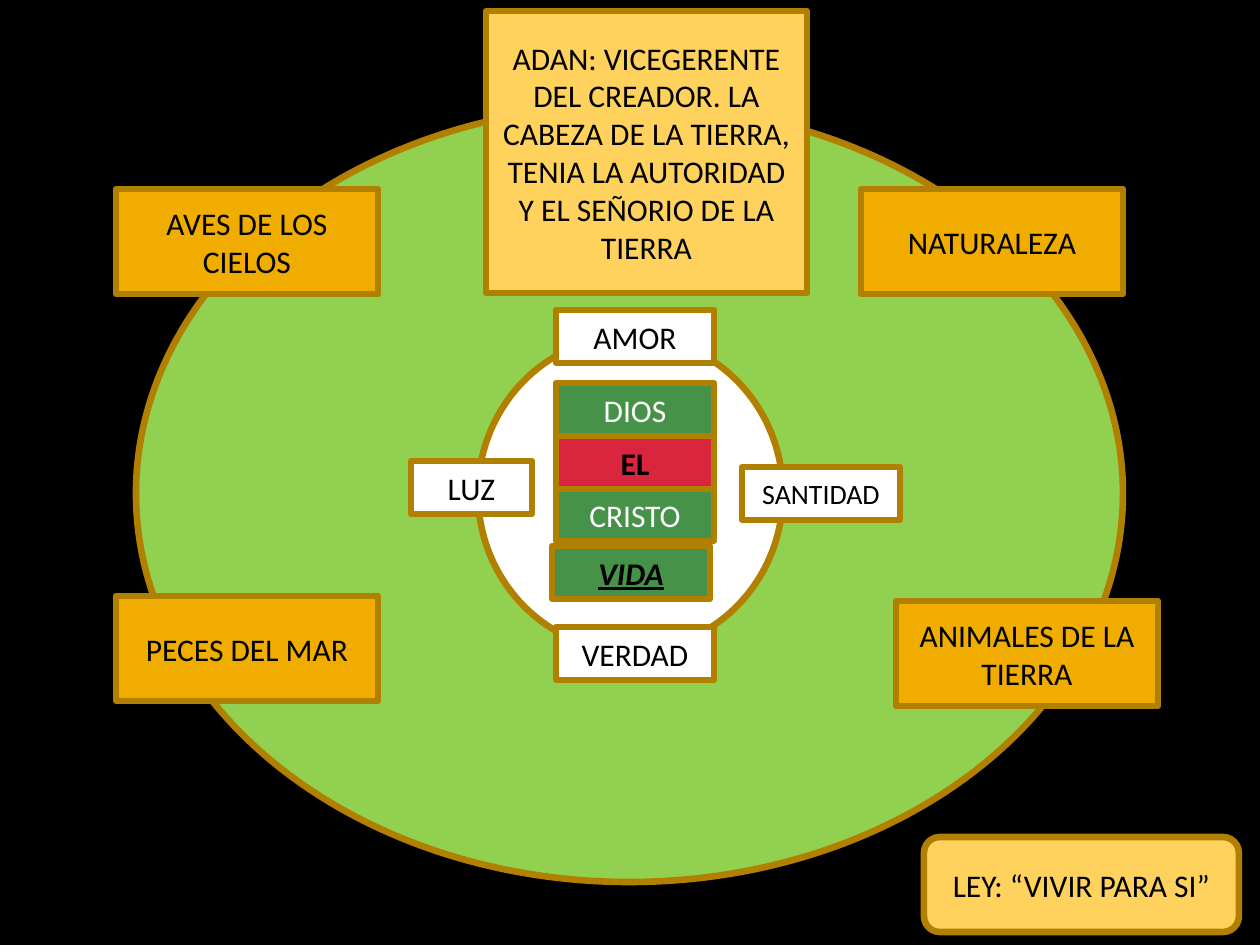
from pptx import Presentation
from pptx.dml.color import RGBColor
from pptx.enum.shapes import MSO_SHAPE
from pptx.enum.text import MSO_ANCHOR, PP_ALIGN
from pptx.util import Pt

PX = 914400 // 126  # EMU in one px

BLACK = RGBColor(0x00, 0x00, 0x00)
WHITE = RGBColor(0xFF, 0xFF, 0xFF)
LIME = RGBColor(0x92, 0xD0, 0x50)
GREEN = RGBColor(0x47, 0x92, 0x49)
RED = RGBColor(0xD9, 0x25, 0x3E)
AMBER = RGBColor(0xF0, 0xAD, 0x00)
SAND = RGBColor(0xFF, 0xD2, 0x5D)
BROWN = RGBColor(0xB2, 0x80, 0x00)

TAG = (158, 53)    # small boxes around the centre
REALM = (262, 105)  # boxes on the rim of the earth
MID = 556          # left edge of the central column


def add_form(slide, kind, spot, size, fill):
    box = (n * PX for n in (*spot, *size))
    form = slide.shapes.add_shape(kind, *box)
    form.shadow.inherit = False
    form.fill.solid()
    form.fill.fore_color.rgb = fill
    form.line.color.rgb = BROWN
    form.line.width = Pt(3.78)
    return form


def add_label(slide, lines, spot, size, fill, ink=BLACK, points=18,
              kind=MSO_SHAPE.RECTANGLE, bold=False, slant=False):
    frame = add_form(slide, kind, spot, size, fill).text_frame
    frame.word_wrap = True
    frame.vertical_anchor = MSO_ANCHOR.MIDDLE
    for i, line in enumerate(lines):
        para = frame.add_paragraph() if i else frame.paragraphs[0]
        para.alignment = PP_ALIGN.CENTER
        run = para.add_run()
        run.text = line
        font = run.font
        font.name = "Calibri"
        font.size = Pt(points)
        font.color.rgb = ink
        font.bold = bold
        font.italic = font.underline = slant


def main():
    deck = Presentation()
    deck.slide_width = 1260 * PX
    deck.slide_height = 945 * PX
    slide = deck.slides.add_slide(deck.slide_layouts[6])
    slide.background.fill.solid()
    slide.background.fill.fore_color.rgb = BLACK

    # Earth and the circle at its centre
    add_form(slide, MSO_SHAPE.OVAL, (136, 105), (987, 777), LIME)
    add_form(slide, MSO_SHAPE.OVAL, (478, 336), (305, 315), WHITE)

    # Central column
    add_label(slide, ["VIDA"], (552, 546), TAG, GREEN, bold=True, slant=True)
    add_label(slide, ["CRISTO"], (MID, 488), TAG, GREEN, WHITE)
    add_label(slide, ["EL"], (MID, 436), TAG, RED, bold=True)
    add_label(slide, ["DIOS"], (MID, 383), TAG, GREEN, WHITE)

    # Virtues around the circle
    add_label(slide, ["AMOR"], (MID, 310), TAG, WHITE)
    add_label(slide, ["VERDAD"], (MID, 627), TAG, WHITE)
    add_label(slide, ["LUZ"], (411, 461), (121, 53), WHITE)
    add_label(slide, ["SANTIDAD"], (742, 467), TAG, WHITE, points=16)

    # Realms on the rim
    for text, spot in (
        ("AVES DE LOS CIELOS", (116, 189)),
        ("NATURALEZA", (861, 189)),
        ("ANIMALES DE LA TIERRA", (896, 601)),
        ("PECES DEL MAR", (116, 596)),
    ):
        add_label(slide, [text], spot, REALM, AMBER)

    # Adam at the head, and the law
    add_label(slide, ["ADAN: VICEGERENTE DEL CREADOR. LA",
                      "CABEZA DE LA TIERRA, TENIA LA AUTORIDAD "
                      "Y EL SEÑORIO DE LA TIERRA"],
              (486, 11), (321, 282), SAND)
    add_label(slide, ["LEY: “VIVIR PARA SI”"], (924, 837), (315, 95), SAND,
              kind=MSO_SHAPE.ROUNDED_RECTANGLE)

    deck.save("out.pptx")


if __name__ == "__main__":
    main()
